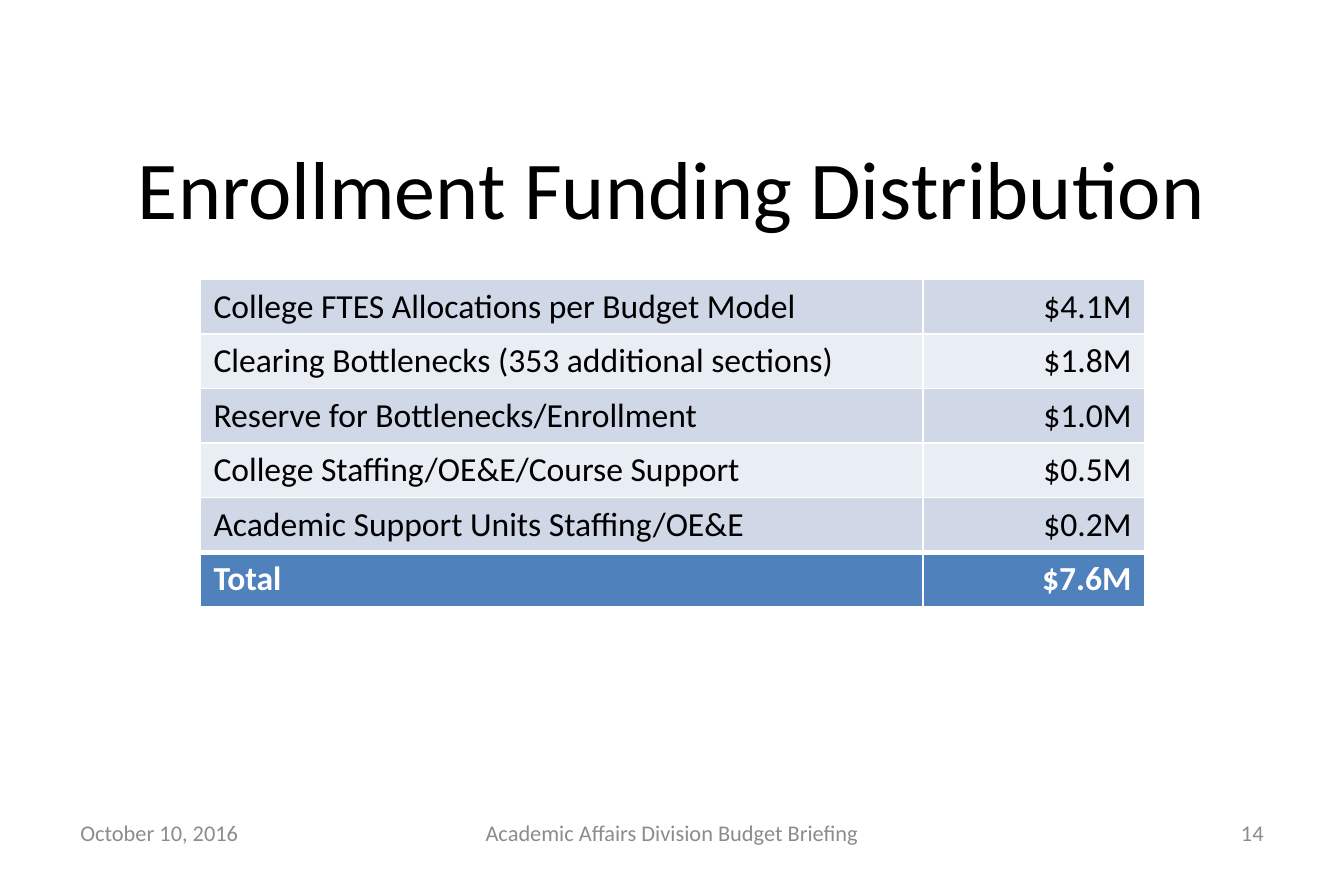
import pptx
import pptx.dml.color
import pptx.enum.text
import pptx.oxml
import pptx.oxml.ns
import pptx.util

Pt = pptx.util.Pt
ALIGN = pptx.enum.text.PP_ALIGN
MIDDLE = pptx.enum.text.MSO_ANCHOR.MIDDLE

FONT = "Calibri"
COLORS = {
    "text": "000000",
    "footer": "8C8C8C",
    "band_dark": "D0D8E8",
    "band_light": "E9EDF4",
    "total": "4F81BD",
    "white": "FFFFFF",
}

FUNDING = [
    ("College FTES Allocations per Budget Model", "$4.1M"),
    ("Clearing Bottlenecks (353 additional sections)", "$1.8M"),
    ("Reserve for Bottlenecks/Enrollment", "$1.0M"),
    ("College Staffing/OE&E/Course Support", "$0.5M"),
    ("Academic Support Units Staffing/OE&E", "$0.2M"),
    ("Total", "$7.6M"),
]


def rgb(name):
    return pptx.dml.color.RGBColor.from_string(COLORS[name])


def write(frame, text, size, color, align, bold=False):
    frame.text = text
    paragraph = frame.paragraphs[0]
    paragraph.alignment = align
    font = paragraph.runs[0].font
    font.name, font.size, font.bold = FONT, Pt(size), bold
    font.color.rgb = rgb(color)


def add_text(slide, box, text, size, color, align):
    frame = slide.shapes.add_textbox(*map(Pt, box)).text_frame
    frame.word_wrap = True
    frame.vertical_anchor = MIDDLE
    write(frame, text, size, color, align)


def set_borders(cell, top, bottom):
    properties = cell._tc.get_or_add_tcPr()
    for side, width in (("L", 1), ("R", 1), ("T", top), ("B", bottom)):
        properties.append(pptx.oxml.parse_xml(
            f'<a:ln{side} {pptx.oxml.ns.nsdecls("a")} w="{Pt(width)}">'
            f'<a:solidFill><a:srgbClr val="{COLORS["white"]}"/></a:solidFill>'
            f'</a:ln{side}>'))


def add_funding_table(slide, box):
    left, top, width, height = box
    table = slide.shapes.add_table(len(FUNDING), 2, *map(Pt, box)).table
    amount_width = 118.8
    table.columns[0].width = Pt(width - amount_width)
    table.columns[1].width = Pt(amount_width)
    total_row = len(FUNDING) - 1

    for r, values in enumerate(FUNDING):
        table.rows[r].height = Pt(height / len(FUNDING))
        is_total = r == total_row
        band = "total" if is_total else ("band_dark", "band_light")[r % 2]
        for c, value in enumerate(values):
            cell = table.cell(r, c)
            # A heavier rule separates the total from the items
            set_borders(cell, 3 if is_total else 1, 3 if r == total_row - 1 else 1)
            cell.fill.solid()
            cell.fill.fore_color.rgb = rgb(band)
            write(cell.text_frame, value, 18, "white" if is_total else "text",
                  (ALIGN.LEFT, ALIGN.RIGHT)[c], is_total)


def add_footer(slide, box):
    left, top, width, height = box
    side_width, center_width = 168, 228
    parts = [
        (left, side_width, "October 10, 2016", ALIGN.LEFT),
        (left + (width - center_width) / 2, center_width,
         "Academic Affairs Division Budget Briefing", ALIGN.CENTER),
        (left + width - side_width, side_width, "14", ALIGN.RIGHT),
    ]
    for x, part_width, text, align in parts:
        add_text(slide, (x, top, part_width, height), text, 12, "footer", align)


def main():
    deck = pptx.Presentation()
    deck.slide_width, deck.slide_height = Pt(720), Pt(468)
    slide = deck.slides.add_slide(deck.slide_layouts[6])

    # Title
    add_text(slide, (36, 63.4, 648, 72.7), "Enrollment Funding Distribution",
             44, "text", ALIGN.CENTER)
    # Funding by purpose
    add_funding_table(slide, (107.2, 149.7, 506.2, 175.2))
    # Date, briefing name and page number
    add_footer(slide, (36, 433.6, 648, 25))

    deck.save("out.pptx")


if __name__ == "__main__":
    main()
